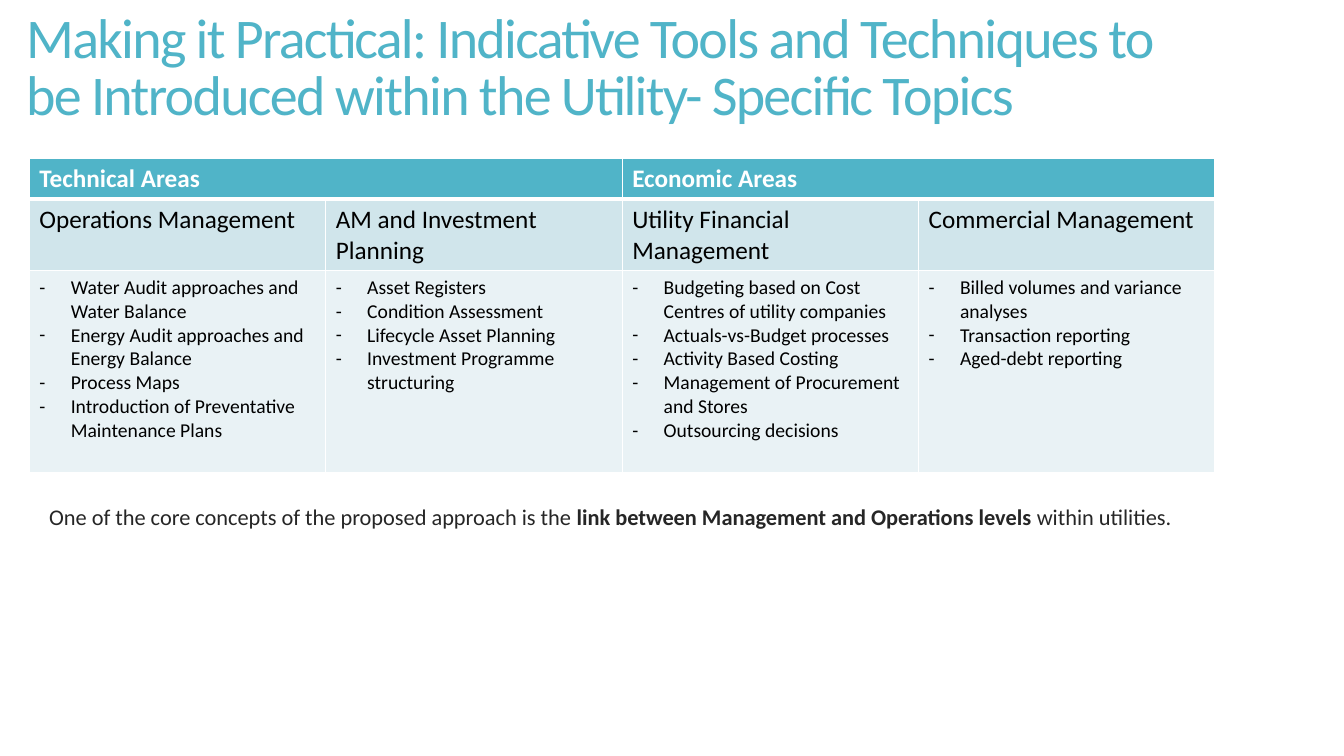
from lxml.etree import SubElement
from pptx import Presentation
from pptx.dml.color import RGBColor
from pptx.enum.text import MSO_ANCHOR
from pptx.oxml.ns import qn
from pptx.util import Cm, Pt

TEAL = RGBColor(0x50, 0xB4, 0xC8)
LIGHT_TEAL = RGBColor(0xD0, 0xE5, 0xEB)
PALE_TEAL = RGBColor(0xE9, 0xF2, 0xF5)
WHITE = RGBColor(0xFF, 0xFF, 0xFF)
BLACK = RGBColor(0x00, 0x00, 0x00)
DARK_GREY = RGBColor(0x26, 0x26, 0x26)

AREAS = ["Technical Areas", "Economic Areas"]
TOPICS = {
    "Operations Management": [
        "Water Audit approaches and Water Balance",
        "Energy Audit approaches and Energy Balance",
        "Process Maps",
        "Introduction of Preventative Maintenance Plans",
    ],
    "AM and Investment Planning": [
        "Asset Registers",
        "Condition Assessment",
        "Lifecycle Asset Planning",
        "Investment Programme structuring",
    ],
    "Utility Financial Management": [
        "Budgeting based on Cost Centres of utility companies",
        "Actuals-vs-Budget processes",
        "Activity Based Costing",
        "Management of Procurement and Stores",
        "Outsourcing decisions",
    ],
    "Commercial Management": [
        "Billed volumes and variance analyses",
        "Transaction reporting",
        "Aged-debt reporting",
    ],
}


class SlideBuilder:
    font_name = "Calibri"
    line_spacing = 0.85

    def __init__(self, slide):
        self.slide = slide

    def add_run(self, paragraph, text, size, color, bold=False):
        run = paragraph.add_run()
        run.text = text
        run.font.name = self.font_name
        run.font.size = Pt(size)
        run.font.color.rgb = color
        run.font.bold = bold
        return run

    def add_text(self, left, top, width, height, anchor=MSO_ANCHOR.TOP):
        """Add a wrapping text box and return its first paragraph."""
        frame = self.slide.shapes.add_textbox(
            Cm(left), Cm(top), Cm(width), Cm(height)).text_frame
        frame.word_wrap = True
        frame.vertical_anchor = anchor
        paragraph = frame.paragraphs[0]
        paragraph.line_spacing = self.line_spacing
        return paragraph

    def add_table(self, left, top, column_width, column_count, row_heights):
        table = self.slide.shapes.add_table(
            len(row_heights), column_count, Cm(left), Cm(top),
            Cm(column_width * column_count), Cm(sum(row_heights))).table
        for column in table.columns:
            column.width = Cm(column_width)
        for row, height in zip(table.rows, row_heights):
            row.height = Cm(height)
        return table

    def style_cell(self, cell, fill, bottom=1, top=1):
        properties = cell._tc.get_or_add_tcPr()
        for side, width in (("L", 1), ("R", 1), ("T", top), ("B", bottom)):
            line = SubElement(properties, qn(f"a:ln{side}"), w=str(Pt(width)))
            line_fill = SubElement(line, qn("a:solidFill"))
            SubElement(line_fill, qn("a:srgbClr"), val=str(WHITE))
        cell.fill.solid()
        cell.fill.fore_color.rgb = fill

    def add_dash_list(self, cell, items, size, color):
        frame = cell.text_frame
        for index, item in enumerate(items):
            paragraph = frame.add_paragraph() if index else frame.paragraphs[0]
            properties = paragraph._p.get_or_add_pPr()
            properties.set("marL", str(Cm(0.79)))
            properties.set("indent", str(-Cm(0.79)))
            SubElement(properties, qn("a:buFont"), typeface=self.font_name)
            SubElement(properties, qn("a:buChar"), char="-")
            self.add_run(paragraph, item, size, color)


def main():
    presentation = Presentation()
    presentation.slide_width = Cm(33.87)
    presentation.slide_height = Cm(19.05)
    builder = SlideBuilder(
        presentation.slides.add_slide(presentation.slide_layouts[6]))

    # Title
    title = builder.add_text(0.41, 0.41, 29.92, 2.72, MSO_ANCHOR.MIDDLE)
    title_run = builder.add_run(
        title, "Making it Practical: Indicative Tools and Techniques to be "
        "Introduced within the Utility- Specific Topics", 40, TEAL)
    title_run.font._element.set("spc", "-120")

    # Table of areas, topics and tools
    table = builder.add_table(0.74, 3.99, 7.47, len(TOPICS), [1.03, 1.8, 5.1])
    for column in range(len(TOPICS)):
        builder.style_cell(table.cell(0, column), TEAL, bottom=3)
        builder.style_cell(table.cell(1, column), LIGHT_TEAL, top=3)
        builder.style_cell(table.cell(2, column), PALE_TEAL)
    for index, area in enumerate(AREAS):
        cell = table.cell(0, 2 * index)
        cell.merge(table.cell(0, 2 * index + 1))
        builder.add_run(cell.text_frame.paragraphs[0], area, 18, WHITE, True)
    for column, (topic, tools) in enumerate(TOPICS.items()):
        heading = table.cell(1, column).text_frame.paragraphs[0]
        builder.add_run(heading, topic, 18, BLACK)
        builder.add_dash_list(table.cell(2, column), tools, 14, BLACK)

    # Closing note
    note = builder.add_text(0.74, 12.65, 29.88, 3.33)
    note.space_before = Pt(13)
    note._p.get_or_add_pPr().set("marL", str(Cm(0.25)))
    for text, bold in (
        ("One of the core concepts of the proposed approach is the ", False),
        ("link between Management and Operations levels", True),
        (" within utilities.", False),
    ):
        builder.add_run(note, text, 16, DARK_GREY, bold)

    presentation.save("out.pptx")


if __name__ == "__main__":
    main()
